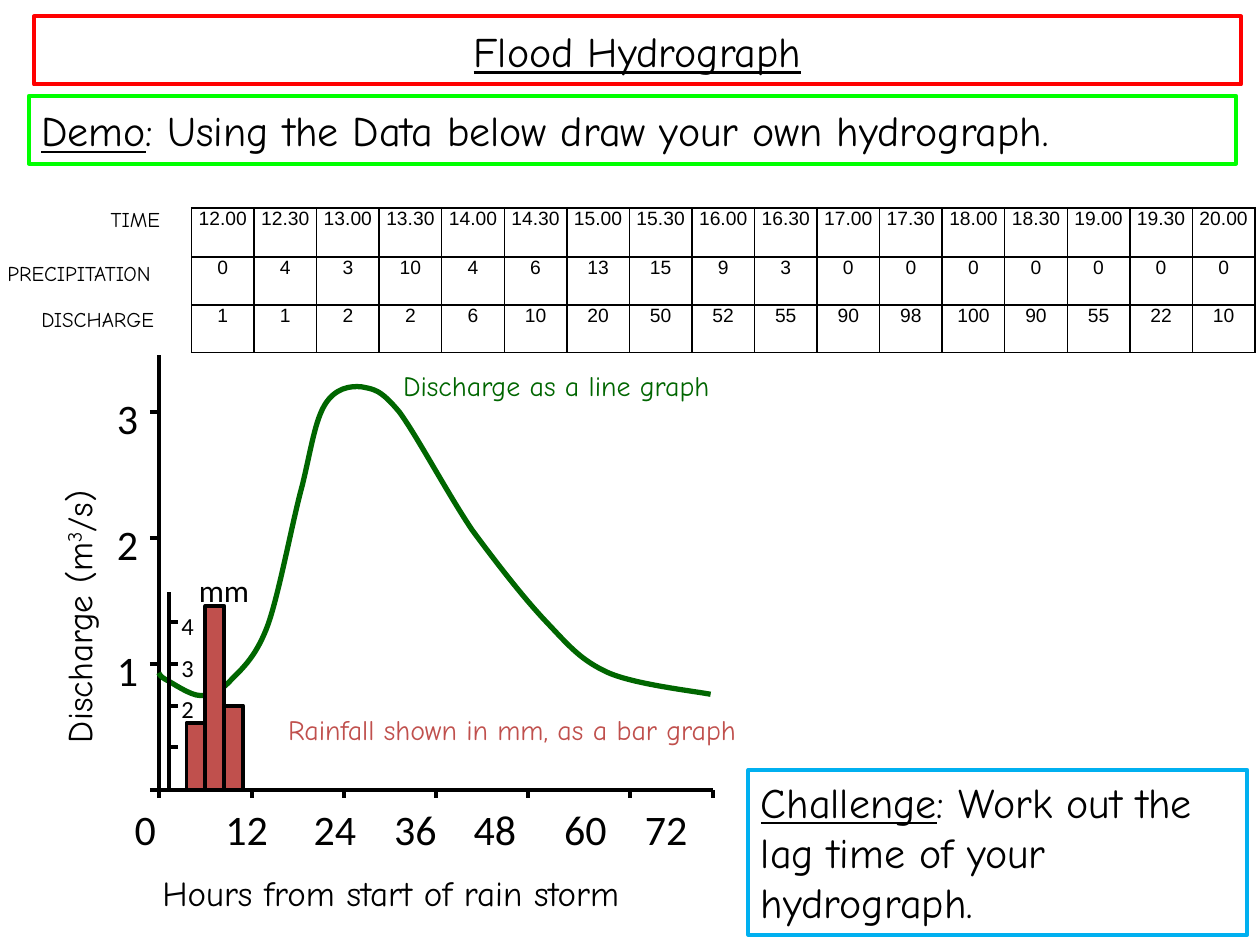
from dataclasses import dataclass

from lxml import etree
from pptx import Presentation
from pptx.dml.color import RGBColor
from pptx.enum import shapes as sh, text as tx
from pptx.oxml import ns
from pptx.util import Inches, Pt


@dataclass(frozen=True)
class Theme:
    ink: str = "000000"
    paper: str = "FFFFFF"
    red: str = "FF0000"
    lime: str = "00FF00"
    sky: str = "00B0F0"
    flow: str = "006600"
    rain: str = "C0504D"
    hand: str = "Comic Neue"
    plain: str = "Calibri"
    grid: str = "Arial"
    head: int = 24
    axis: int = 20
    unit: int = 18
    note: int = 16
    tick: int = 14
    row: int = 12
    cell: int = 11
    rule: float = 2.25
    curve: float = 3


T = Theme()
LEFT, MID = tx.PP_ALIGN.LEFT, tx.PP_ALIGN.CENTER

TIMES = [f"{12 + i // 2}.{'30' if i % 2 else '00'}" for i in range(17)]
RAIN = [0, 4, 3, 10, 4, 6, 13, 15, 9, 3, 0, 0, 0, 0, 0, 0, 0]
FLOW = [1, 1, 2, 2, 6, 10, 20, 50, 52, 55, 90, 98, 100, 90, 55, 22, 10]

# Discharge curve: start point, then two handles and an end point per piece
START = (1.26, 5.34)
CURVE = [
    ((1.27, 5.35), (1.26, 5.36), (1.31, 5.39)),
    ((1.37, 5.42), (1.51, 5.52), (1.59, 5.52)),
    ((1.68, 5.52), (1.75, 5.49), (1.84, 5.39)),
    ((1.93, 5.3), (2.04, 5.2), (2.13, 4.95)),
    ((2.22, 4.69), (2.32, 4.14), (2.4, 3.85)),
    ((2.47, 3.56), (2.5, 3.34), (2.58, 3.21)),
    ((2.66, 3.08), (2.78, 3.06), (2.87, 3.07)),
    ((2.97, 3.09), (3.02, 3.09), (3.17, 3.27)),
    ((3.31, 3.46), (3.56, 3.93), (3.75, 4.21)),
    ((3.95, 4.48), (4.16, 4.75), (4.34, 4.94)),
    ((4.52, 5.13), (4.61, 5.24), (4.83, 5.34)),
    ((5.04, 5.43), (5.47, 5.48), (5.64, 5.51)),
]


def inch(*vals):
    return [Inches(v) for v in vals]


def paint(shape, line, fill=None, width=T.rule):
    shape.shadow.inherit = False
    if fill:
        shape.fill.solid()
        shape.fill.fore_color.rgb = RGBColor.from_string(fill)
    else:
        shape.fill.background()
    shape.line.color.rgb = RGBColor.from_string(line)
    shape.line.width = Pt(width)


def write(frame, runs, size, font=T.hand, color=T.ink, align=LEFT):
    """Fill a frame with (text, format) runs; a string is one plain run."""
    para = frame.paragraphs[0]
    para.alignment = align
    for words, form in [(runs, {})] if isinstance(runs, str) else runs:
        run = para.add_run()
        run.text = words
        for key, val in {"size": Pt(size), "name": font, **form}.items():
            setattr(run.font, key, val)
        run.font.color.rgb = RGBColor.from_string(color)
    return para


def label(parts, box, runs, size, **form):
    area = parts.add_textbox(*inch(*box))
    area.text_frame.word_wrap = True
    write(area.text_frame, runs, size, **form)
    return area


def panel(parts, box, runs, line, fill=None, anchor=tx.MSO_ANCHOR.MIDDLE):
    area = parts.add_shape(sh.MSO_SHAPE.RECTANGLE, *inch(*box))
    paint(area, line, fill)
    frame = area.text_frame
    frame.word_wrap, frame.vertical_anchor = True, anchor
    write(frame, runs, T.head)


def stroke(parts, x1, y1, x2, y2):
    line = parts.add_connector(sh.MSO_CONNECTOR.STRAIGHT, *inch(x1, y1, x2, y2))
    line.line.color.rgb = RGBColor.from_string(T.ink)
    line.line.width = Pt(T.rule)
    etree.SubElement(line._element.spPr, ns.qn("a:effectLst"))


def title(slide, box):
    area = slide.shapes.title
    area.left, area.top, area.width, area.height = inch(*box)
    paint(area, T.red, T.paper)
    frame = area.text_frame
    frame.auto_size, frame.vertical_anchor = tx.MSO_AUTO_SIZE.NONE, tx.MSO_ANCHOR.MIDDLE
    write(frame, [("Flood Hydrograph", {"underline": True})], T.head, align=MID)


def border(cell):
    props = cell._tc.get_or_add_tcPr()
    for i, side in enumerate(("lnL", "lnR", "lnT", "lnB")):
        line = etree.Element(ns.qn(f"a:{side}"), w=str(Pt(1)))
        fill = etree.SubElement(line, ns.qn("a:solidFill"))
        etree.SubElement(fill, ns.qn("a:srgbClr"), val=T.ink)
        props.insert(i, line)


def data(slide, box):
    rows = (TIMES, RAIN, FLOW)
    grid = slide.shapes.add_table(len(rows), len(TIMES), *inch(*box)).table
    grid.first_row = grid.horz_banding = False
    for col in grid.columns:
        col.width = Inches(box[2] / len(TIMES))
    for row, high in zip(grid.rows, (0.39, 0.38, 0.38)):
        row.height = Inches(high)
    for r, vals in enumerate(rows):
        for c, val in enumerate(vals):
            cell = grid.cell(r, c)
            for side in ("left", "right", "top", "bottom"):
                setattr(cell, f"margin_{side}", 0)
            cell.fill.background()
            border(cell)
            write(cell.text_frame, str(val), T.cell, font=T.grid, align=MID)
    # Row names to the left of the table
    x, y = box[:2]
    for name, dx, dy, wide in (("TIME", -0.74, -0.06, 0.7),
                               ("PRECIPITATION", -1.56, 0.37, 1.61),
                               ("DISCHARGE", -1.29, 0.73, 1.25)):
        label(slide.shapes, (x + dx, y + dy, wide, 0.3), name, T.row)


def bend(parts, dx, dy):
    """Draw the discharge curve with true curve segments."""
    unit = 1000
    pen = parts.build_freeform(START[0] * unit, START[1] * unit, Inches(1) / unit)
    pen.add_line_segments([(x * unit, y * unit) for *_, (x, y) in CURVE], close=False)
    shape = pen.convert_to_shape(Inches(dx), Inches(dy))
    paint(shape, T.flow, width=T.curve)
    ends = [START] + [piece[2] for piece in CURVE]
    left, top = (min(axis) for axis in zip(*ends))
    for seg, piece in zip(list(shape._element.iter(ns.qn("a:lnTo"))), CURVE):
        cubic = etree.Element(ns.qn("a:cubicBezTo"))
        for x, y in piece:
            etree.SubElement(cubic, ns.qn("a:pt"), x=str(round((x - left) * unit)),
                             y=str(round((y - top) * unit)))
        seg.getparent().replace(seg, cubic)


def graph(slide, box):
    x, y, wide, high = box
    base = y + high
    parts = slide.shapes.add_group_shape().shapes
    # Main axes and curve
    stroke(parts, x, y, x, base)
    stroke(parts, x, base, x + wide, base)
    bend(parts, x - 1.26, y - 2.82)
    # Rainfall bars
    for i, tall in enumerate((0.53, 1.46, 0.67)):
        bar = parts.add_shape(sh.MSO_SHAPE.RECTANGLE,
                              *inch(x + 0.22 + 0.15 * i, base - tall, 0.15, tall))
        paint(bar, T.ink, T.rain)
    # Discharge scale, one inch a unit
    for val in range(4):
        stroke(parts, x - 0.07, base - val, x, base - val)
        if val:
            label(parts, (x - 0.43, base - val - 0.2, 0.37, 0.4), str(val),
                  T.head, font=T.plain)
    # Rainfall scale
    inner = x + 0.08
    stroke(parts, inner, base, inner, base - 1.57)
    for val in range(1, 5):
        mark = base - 0.01 - 0.33 * val
        stroke(parts, inner, mark, inner + 0.07, mark)
        if val > 1:
            label(parts, (inner, mark - 0.14, 0.22, 0.27), str(val),
                  T.tick, font=T.plain)
    # Hour scale, numbers set on tab stops
    for dx in (0, 0.74, 1.47, 2.2, 2.93, 3.74, 4.4):
        stroke(parts, x + dx, base + 0.06, x + dx, base)
    hours = label(parts, (x - 0.29, base + 0.06, 5.34, 0.5),
                  "\t".join(str(h) for h in range(0, 73, 12)), T.head, font=T.plain)
    props = hours.text_frame.paragraphs[0]._p.get_or_add_pPr()
    tabs = etree.SubElement(props, ns.qn("a:tabLst"))
    for stop in (0.72, 1.42, 2.06, 2.69, 3.41, 4.05):
        etree.SubElement(tabs, ns.qn("a:tab"), pos=str(Inches(stop)), algn="l")
    # Axis names and notes
    label(parts, (x - 0.07, base + 0.6, 4.54, 0.44),
          "Hours from start of rain storm", T.axis)
    side = label(parts, (x - 1.83, y + 1.76, 2.39, 0.44),
                 [("Discharge (m", {}), ("3", {}), ("/s)", {})], T.axis)
    side.rotation = 270
    power = side.text_frame.paragraphs[0].runs[1]
    power._r.get_or_add_rPr().set("baseline", "30000")
    label(parts, (x + 0.22, y + 1.66, 0.76, 0.43), "mm", T.unit, font=T.plain)
    label(parts, (x + 1.63, y + 0.06, 3.05, 0.37), "Discharge as a line graph",
          T.note, color=T.flow, align=MID)
    label(parts, (x + 0.69, y + 2.79, 4.23, 0.37), "Rainfall shown in mm, as a bar graph",
          T.note, color=T.rain, align=MID)


def main():
    deck = Presentation()
    deck.slide_width, deck.slide_height = inch(10, 7.5)
    slide = deck.slides.add_slide(deck.slide_layouts[5])
    title(slide, (0.27, 0.13, 9.58, 0.54))
    data(slide, (1.52, 1.65, 8.44, 1.15))
    graph(slide, (1.26, 2.82, 4.4, 3.45))
    panel(slide.shapes, (0.23, 0.76, 9.58, 0.54),
          [("Demo", {"underline": True}),
           (": Using the Data below draw your own hydrograph.", {})], T.lime, T.paper)
    panel(slide.shapes, (5.94, 6.11, 3.96, 1.31),
          [("Challenge", {"underline": True}),
           (": Work out the lag time of your hydrograph.", {})],
          T.sky, anchor=tx.MSO_ANCHOR.TOP)
    deck.save("out.pptx")


if __name__ == "__main__":
    main()
